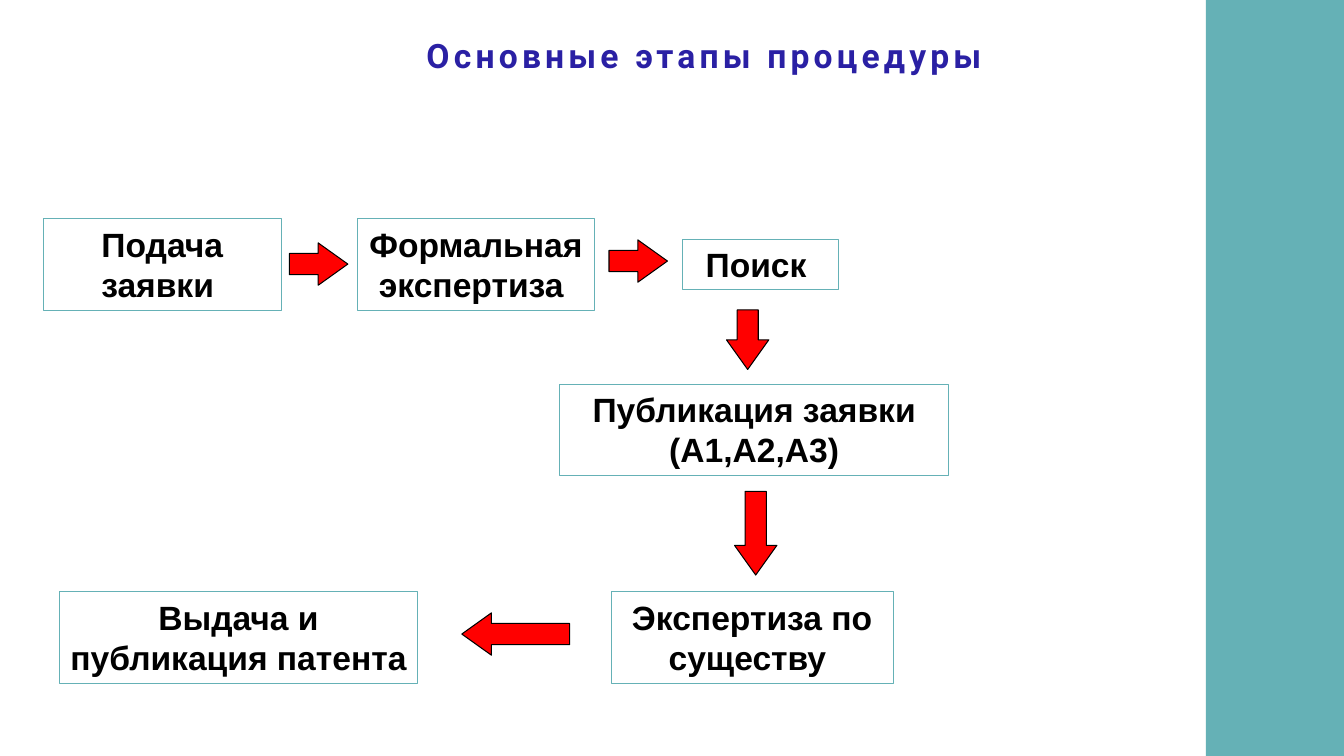
from pptx import Presentation
from pptx.dml.color import RGBColor
from pptx.enum.shapes import MSO_SHAPE
from pptx.enum.text import MSO_ANCHOR, PP_ALIGN
from pptx.util import Pt

SCALE = 9144  # EMU per px, 100 px to the inch
RECT, ARROW = MSO_SHAPE.RECTANGLE, MSO_SHAPE.RIGHT_ARROW
TOP, MIDDLE = MSO_ANCHOR.TOP, MSO_ANCHOR.MIDDLE
CENTER = PP_ALIGN.CENTER

TEAL = RGBColor(0x65, 0xB1, 0xB6)
INDIGO = RGBColor(0x2A, 0x20, 0xA4)
RED = RGBColor(0xFF, 0x00, 0x00)
WHITE = RGBColor(0xFF, 0xFF, 0xFF)
BLACK = RGBColor(0x00, 0x00, 0x00)


class Chart:
    """Draws the parts of the flow chart on one slide."""

    size = Pt(24)

    def __init__(self, slide):
        self.slide = slide

    def shape(self, kind, place, fill, line=None, width=0.5):
        item = self.slide.shapes.add_shape(kind, *(n * SCALE for n in place))
        item.shadow.inherit = False
        item.fill.solid()
        item.fill.fore_color.rgb = fill
        if line is None:
            item.line.fill.background()
        else:
            item.line.color.rgb = line
            item.line.width = Pt(width)
        return item

    def label(self, item, text, face, color, anchor):
        frame = item.text_frame
        frame.word_wrap = True
        frame.vertical_anchor = anchor
        par = frame.paragraphs[0]
        par.alignment = CENTER
        run = par.add_run()
        run.text = text
        font = run.font
        font.name, font.size, font.bold = face, self.size, True
        font.color.rgb = color
        return par, run

    def title(self, text, *place):
        box = self.slide.shapes.add_textbox(*(n * SCALE for n in place))
        par, run = self.label(box, text, "Roboto", INDIGO, MIDDLE)
        par.line_spacing = 0.9
        run._r.get_or_add_rPr().set("spc", "300")

    def step(self, text, *place):
        box = self.shape(RECT, place, WHITE, TEAL)
        self.label(box, text, "Arial", BLACK, TOP)

    def arrow(self, left, top, width, turn=0):
        item = self.shape(ARROW, (left, top, width, 42), RED, BLACK, 0.75)
        item.adjustments[0] = 0.5
        item.adjustments[1] = 0.7
        item.rotation = turn


def main():
    deck = Presentation()
    deck.slide_width, deck.slide_height = 1333 * SCALE, 750 * SCALE
    chart = Chart(deck.slides.add_slide(deck.slide_layouts[6]))

    # Side band and title
    chart.shape(RECT, (1196, 0, 137, 750), TEAL)
    chart.title("Основные этапы процедуры", 170, 34, 1057, 46)

    # Steps of the procedure
    for text, left, top, width, height in (
        ("Подача заявки ", 43, 217, 236, 91),
        ("Формальная экспертиза ", 354, 217, 236, 91),
        ("Поиск ", 677, 237, 155, 50),
        ("Публикация заявки (А1,А2,А3)", 555, 381, 386, 91),
        ("Экспертиза по существу ", 606, 587, 280, 91),
        ("Выдача и публикация патента ", 59, 587, 355, 91),
    ):
        chart.step(text, left, top, width, height)

    # Arrows from step to step
    for left, top, width, turn in (
        (287, 241, 58, 0),
        (604, 238, 58, 0),
        (712, 316, 59, 90),
        (708, 508, 83, 90),
        (458, 608, 107, 180),
    ):
        chart.arrow(left, top, width, turn)

    deck.save("out.pptx")


if __name__ == "__main__":
    main()
